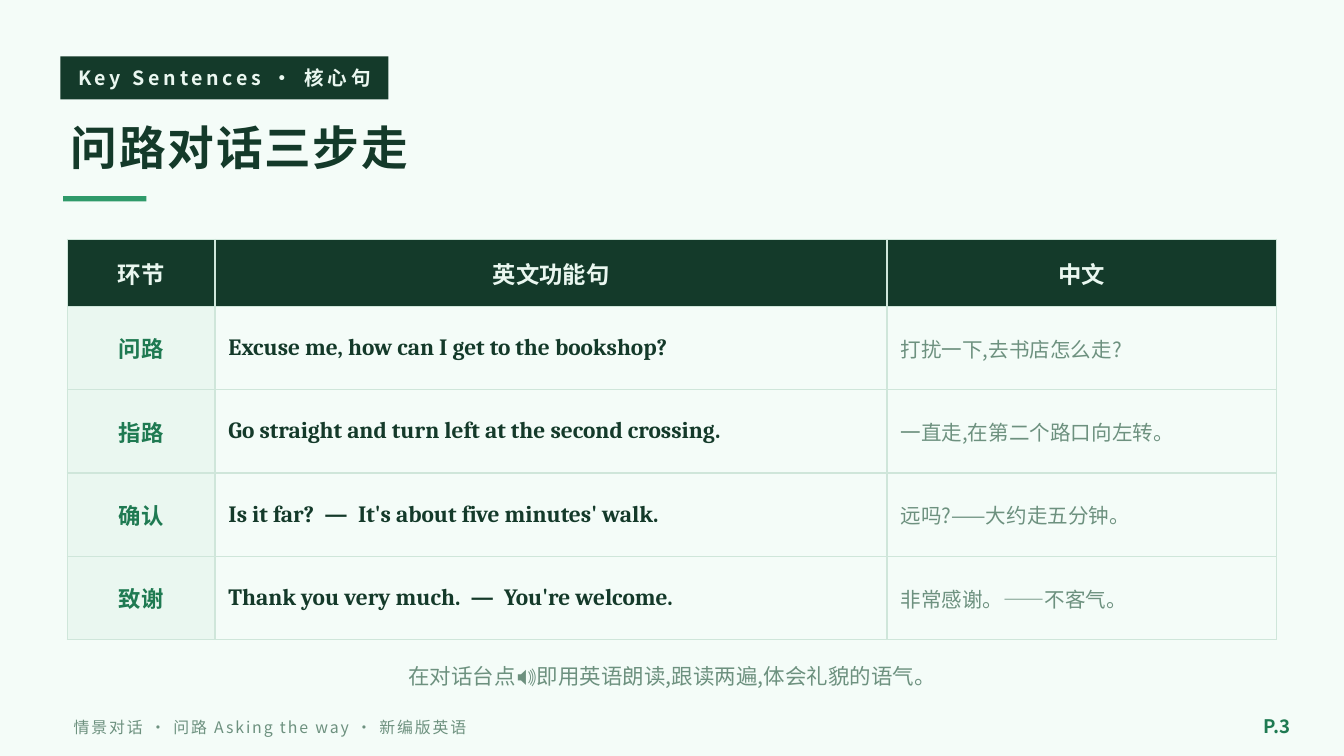
from pptx import Presentation
from pptx.dml.color import RGBColor
from pptx.enum.shapes import MSO_SHAPE as SHAPE
from pptx.enum.text import MSO_ANCHOR as ANCHOR, PP_ALIGN as ALIGN
from pptx.oxml.ns import qn
from pptx.util import Inches, Pt
from lxml import etree

# Content
HEADER = ["环节", "英文功能句", "中文"]
ROWS = [
    ["问路", "Excuse me, how can I get to the bookshop?", "打扰一下,去书店怎么走?"],
    ["指路", "Go straight and turn left at the second crossing.", "一直走,在第二个路口向左转。"],
    ["确认", "Is it far?  —  It's about five minutes' walk.", "远吗?——大约走五分钟。"],
    ["致谢", "Thank you very much.  —  You're welcome.", "非常感谢。——不客气。"],
]
COL_WIDTHS = [1.1, 5, 2.9]
HEADER_HEIGHT, ROW_HEIGHT = 0.5, 0.62

# Colours and fonts
PAPER, DARK, MINT, GREEN = "F4FCF8", "143A2A", "EAF7F0", "1F7A52"
ACCENT, GREY, BORDER = "2F9A6A", "6D917F", "CFE6DA"
SANS, SERIF = "Noto Sans CJK SC", "Cambria"

# Left, top, width, height, fill
BARS = [(0.45, 0.42, 2.44, 0.32, DARK), (0.47, 1.46, 0.62, 0.04, ACCENT)]

# Box, text, format
TEXTS = [
    ((0.45, 0.41, 2.44, 0.34), "Key Sentences · 核心句",
     dict(size=10.5, color=MINT, bold=True, align=ALIGN.CENTER, spacing=2)),
    ((0.43, 0.78, 9, 0.62), "问路对话三步走",
     dict(size=25, color=DARK, bold=True, spacing=1)),
    ((0.5, 4.78, 9, 0.5), "在对话台点🔊即用英语朗读,跟读两遍,体会礼貌的语气。",
     dict(size=11.5, color=GREY, align=ALIGN.CENTER)),
    ((0.45, 5.26, 6.5, 0.3), "情景对话 · 问路 Asking the way · 新编版英语",
     dict(size=8.5, color=GREY, spacing=1)),
    ((9.1, 5.24, 0.6, 0.32), "P.3",
     dict(size=10, color=GREEN, bold=True, align=ALIGN.RIGHT)),
]

# Cell fill and text format
HEADER_STYLE = (DARK, dict(size=12.5, color=MINT, bold=True, align=ALIGN.CENTER))
COLUMN_STYLES = [
    (MINT, dict(size=12, color=GREEN, bold=True, align=ALIGN.CENTER)),
    (PAPER, dict(size=12.5, color=DARK, bold=True, font=SERIF)),
    (PAPER, dict(size=11, color=GREY)),
]


def rgb(value):
    return RGBColor.from_string(value)


def paint(fill, color):
    fill.solid()
    fill.fore_color.rgb = rgb(color)


def write(tf, text, size, color, bold=False, font=SANS, align=ALIGN.LEFT, spacing=0):
    p = tf.paragraphs[0]
    p.alignment = align
    r = p.add_run()
    r.text = text
    for name, value in dict(size=Pt(size), bold=bold, name=font).items():
        setattr(r.font, name, value)
    r.font.color.rgb = rgb(color)
    props = r._r.get_or_add_rPr()
    etree.SubElement(props, qn("a:ea"), typeface=font)
    if spacing:
        props.set("spc", str(spacing * 100))


def add_borders(cell):
    props = cell._tc.get_or_add_tcPr()
    for side in ("lnL", "lnR", "lnT", "lnB"):
        line = etree.SubElement(props, qn(f"a:{side}"), w=str(Pt(0.75)))
        fill = etree.SubElement(line, qn("a:solidFill"))
        etree.SubElement(fill, qn("a:srgbClr"), val=BORDER)


# Widescreen slide, 16:9
prs = Presentation()
prs.slide_width, prs.slide_height = Inches(10), Inches(10 * 9 / 16)
s = prs.slides.add_slide(prs.slide_layouts[6])
paint(s.background.fill, PAPER)

# Label block and title underline
for *box, color in BARS:
    sp = s.shapes.add_shape(SHAPE.RECTANGLE, *map(Inches, box))
    sp.shadow.inherit = False
    paint(sp.fill, color)
    sp.line.fill.background()

# Label, title, hint and footer
for box, text, style in TEXTS:
    tf = s.shapes.add_textbox(*map(Inches, box)).text_frame
    tf.word_wrap = True
    tf.vertical_anchor = ANCHOR.MIDDLE
    write(tf, text, **style)

# Sentence table
heights = [HEADER_HEIGHT] + [ROW_HEIGHT] * len(ROWS)
table = s.shapes.add_table(
    len(heights), len(COL_WIDTHS), Inches(0.5), Inches(1.78),
    Inches(sum(COL_WIDTHS)), Inches(sum(heights))).table
for column, width in zip(table.columns, COL_WIDTHS):
    column.width = Inches(width)
for i, (texts, height) in enumerate(zip([HEADER] + ROWS, heights)):
    table.rows[i].height = Inches(height)
    for j, text in enumerate(texts):
        fill, style = COLUMN_STYLES[j] if i else HEADER_STYLE
        cell = table.cell(i, j)
        cell.vertical_anchor = ANCHOR.MIDDLE
        add_borders(cell)
        paint(cell.fill, fill)
        write(cell.text_frame, text, **style)

prs.save("out.pptx")
